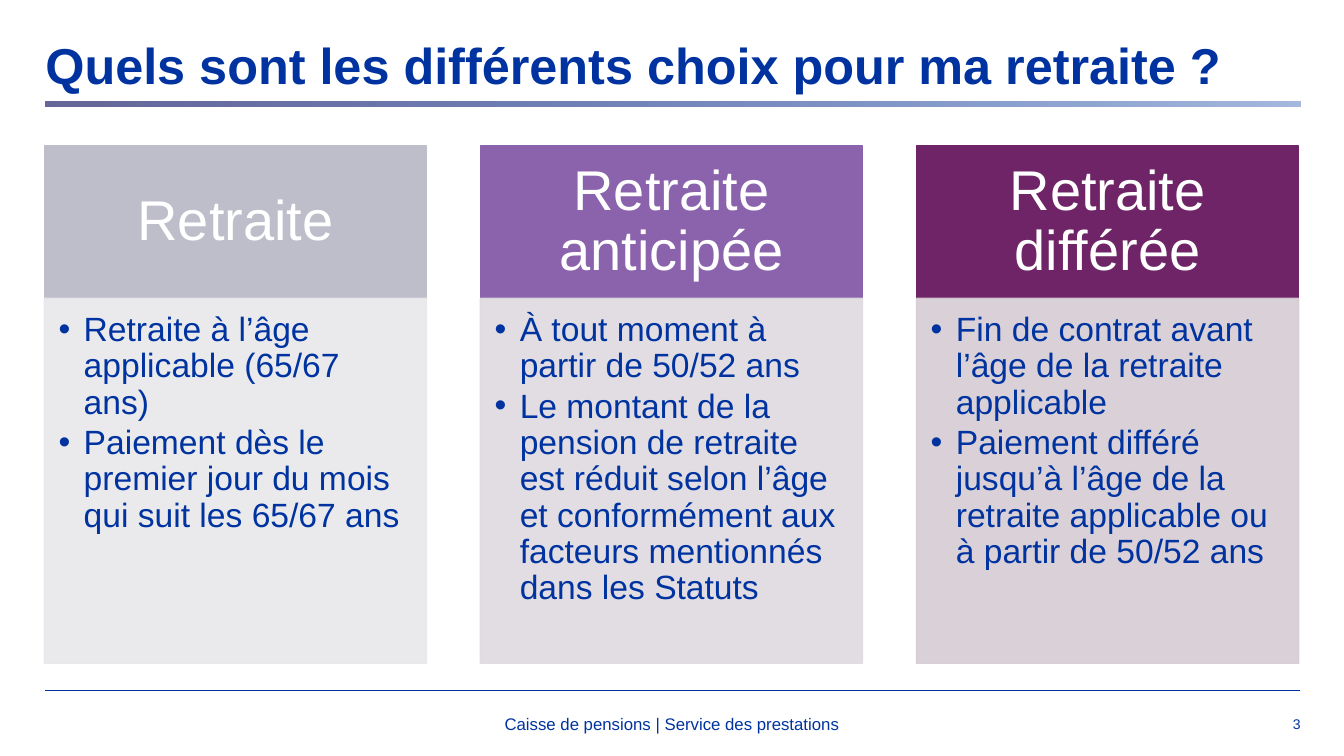
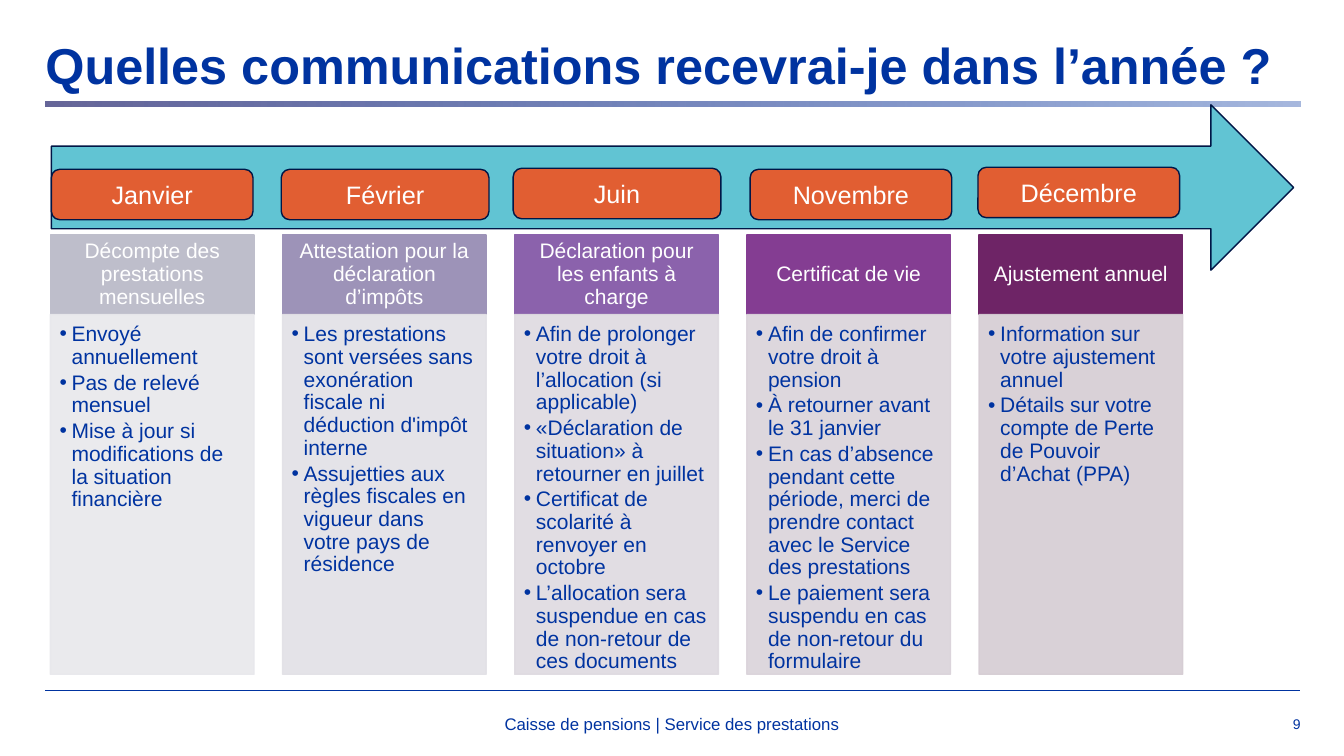
from typing import NamedTuple

from lxml import etree
from pptx import Presentation
from pptx.dml.color import RGBColor
from pptx.enum.shapes import MSO_CONNECTOR, MSO_SHAPE
from pptx.enum.text import MSO_ANCHOR, PP_ALIGN
from pptx.oxml.ns import qn
from pptx.util import Inches, Pt

FONT = "Arial"
COLOURS = {
    "blue": "0033A0",
    "rule": "666699",
    "white": "FFFFFF",
    "navy": "001646",
    "arrow": "61C4D3",
    "month": "E15E32",
    # header and body tints of the columns
    "grey": "BEBECB", "grey_light": "E8E8EC",
    "lilac": "9D93B8", "lilac_light": "E2E1E6",
    "violet": "8B62AC", "violet_light": "DEDAE0",
    "purple": "843D92", "purple_light": "DAD3DA",
    "plum": "6E2466", "plum_light": "D5CCD3",
}
FOOTER = "Caisse de pensions | Service des prestations"
BODY_OPACITY = 90


class Box(NamedTuple):
    left: float
    top: float
    width: float
    height: float


class Column(NamedTuple):
    tint: str
    heading: str
    points: list[str]


class ColumnStyle(NamedTuple):
    left: float
    right: float
    top: float
    width: float
    heading_height: float
    body_height: float
    heading_size: float
    body_size: float
    heading_insets: tuple[float, float, float, float]
    body_insets: tuple[float, float, float, float]
    indent: float
    space_after: float


class Month(NamedTuple):
    name: str
    left: float
    top: float
    width: float


CHOICE_STYLE = ColumnStyle(
    left=0.44, right=12.88, top=1.45, width=3.79, heading_height=1.51, body_height=3.62,
    heading_size=40, body_size=24, heading_insets=(0.31, 0.18, 0.31, 0.18),
    body_insets=(0.14, 0.14, 0.19, 0.21), indent=0.25, space_after=3)
CHOICES = [
    Column("grey", "Retraite", [
        "Retraite à l’âge applicable (65/67 ans)",
        "Paiement dès le premier jour du mois qui suit les 65/67 ans"]),
    Column("violet", "Retraite anticipée", [
        "À tout moment à partir de 50/52 ans",
        "Le montant de la pension de retraite est réduit selon l’âge et "
        "conformément aux facteurs mentionnés dans les Statuts"]),
    Column("plum", "Retraite différée", [
        "Fin de contrat avant l’âge de la retraite applicable",
        "Paiement différé jusqu’à l’âge de la retraite applicable ou à partir de 50/52 ans"]),
]

LETTER_STYLE = ColumnStyle(
    left=0.5, right=11.73, top=2.33, width=2.02, heading_height=0.79, body_height=3.57,
    heading_size=15, body_size=15, heading_insets=(0.12, 0.07, 0.12, 0.07),
    body_insets=(0.09, 0.09, 0.11, 0.13), indent=0.12, space_after=2.25)
LETTERS = [
    Column("grey", "Décompte des prestations mensuelles", [
        "Envoyé annuellement",
        "Pas de relevé mensuel",
        "Mise à jour si modifications de la situation financière"]),
    Column("lilac", "Attestation pour la déclaration d’impôts", [
        "Les prestations sont versées sans exonération fiscale ni déduction d'impôt interne",
        "Assujetties aux règles fiscales en vigueur dans votre pays de résidence"]),
    Column("violet", "Déclaration pour les enfants à charge", [
        "Afin de prolonger votre droit à l’allocation (si applicable)",
        "«Déclaration de situation» à retourner en juillet",
        "Certificat de scolarité à renvoyer en octobre",
        "L’allocation sera suspendue en cas de non-retour de ces documents"]),
    Column("purple", "Certificat de vie", [
        "Afin de confirmer votre droit à pension",
        "À retourner avant le 31 janvier",
        "En cas d’absence pendant cette période, merci de prendre contact "
        "avec le Service des prestations",
        "Le paiement sera suspendu en cas de non-retour du formulaire"]),
    Column("plum", "Ajustement annuel", [
        "Information sur votre ajustement annuel",
        "Détails sur votre compte de Perte de Pouvoir d’Achat (PPA)"]),
]
MONTHS = [
    Month("Janvier", 0.51, 1.68, 2),
    Month("Février", 2.79, 1.68, 2.06),
    Month("Juin", 5.09, 1.67, 2.06),
    Month("Novembre", 7.44, 1.68, 2),
    Month("Décembre", 9.7, 1.66, 2),
]


def rgb(name: str) -> RGBColor:
    return RGBColor.from_string(COLOURS[name])


def set_opacity(parent, percent: int) -> None:
    """Make every colour under an XML element partly transparent."""
    for colour in parent.iter(qn("a:srgbClr")):
        etree.SubElement(colour, qn("a:alpha"), val=str(percent * 1000))


def add_block(slide, preset, box: Box, fill: str, line: str):
    block = slide.shapes.add_shape(preset, *map(Inches, box))
    block.shadow.inherit = False
    block.fill.solid()
    block.fill.fore_color.rgb = rgb(fill)
    block.line.color.rgb = rgb(line)
    block.line.width = Pt(1)
    return block


def set_frame(frame, anchor, insets=(0, 0, 0, 0)) -> None:
    frame.word_wrap = True
    frame.vertical_anchor = anchor
    (frame.margin_left, frame.margin_top,
     frame.margin_right, frame.margin_bottom) = map(Inches, insets)


def style_paragraph(paragraph, size: float, colour: str, align=PP_ALIGN.LEFT,
                    bold: bool = False, spacing: float = 1.0) -> None:
    paragraph.alignment = align
    paragraph.line_spacing = spacing
    font = paragraph.font
    font.name, font.size, font.bold = FONT, Pt(size), bold
    font.color.rgb = rgb(colour)


def add_label(slide, box: Box, text: str, size: float, align=PP_ALIGN.LEFT,
              anchor=MSO_ANCHOR.MIDDLE, bold: bool = False, spacing: float = 1.0) -> None:
    frame = slide.shapes.add_textbox(*map(Inches, box)).text_frame
    set_frame(frame, anchor)
    frame.text = text
    style_paragraph(frame.paragraphs[0], size, "blue", align, bold, spacing)


def add_bullet(paragraph, indent: float) -> None:
    paragraph.level = 1
    properties = paragraph._p.get_or_add_pPr()
    properties.set("marL", str(Inches(indent)))
    properties.set("indent", str(-Inches(indent)))
    etree.SubElement(properties, qn("a:buFont"), typeface=FONT)
    etree.SubElement(properties, qn("a:buChar"), char="•")


def add_page(deck, title: str, number: int):
    """Add a slide with the shared title, gradient rule and footer."""
    slide = deck.slides.add_slide(deck.slide_layouts[6])
    footer_line = slide.shapes.add_connector(
        MSO_CONNECTOR.STRAIGHT, *map(Inches, (0.45, 6.85, 12.89, 6.85)))
    footer_line.line.color.rgb = rgb("blue")
    footer_line.line.width = Pt(0.75)
    etree.SubElement(footer_line._element.spPr, qn("a:effectLst"))

    add_label(slide, Box(0.45, 0.41, 12.44, 1.17), title, 36,
              anchor=MSO_ANCHOR.TOP, bold=True, spacing=0.9)
    add_label(slide, Box(12.15, 6.98, 0.75, 0.4), str(number), 10, PP_ALIGN.RIGHT)
    add_label(slide, Box(3.07, 6.98, 7.19, 0.4), FOOTER, 12, PP_ALIGN.CENTER)

    title_rule = add_block(slide, MSO_SHAPE.RECTANGLE, Box(0.45, 1.01, 12.45, 0.05),
                           "rule", "rule")
    title_rule.line.fill.background()
    title_rule.fill.gradient()
    title_rule.fill.gradient_angle = 0
    start, end = title_rule.fill.gradient_stops
    start.color.rgb, start.position = rgb("rule"), 0
    end.color.rgb, end.position = rgb("blue"), 1
    set_opacity(end._gs, 35)
    return slide


def add_heading(slide, preset, box: Box, fill: str, line: str, text: str, size: float,
                insets=(0.1, 0.05, 0.1, 0.05), spacing: float = 1.0) -> None:
    """Add a filled block with white centred text."""
    frame = add_block(slide, preset, box, fill, line).text_frame
    set_frame(frame, MSO_ANCHOR.MIDDLE, insets)
    frame.text = text
    style_paragraph(frame.paragraphs[0], size, "white", PP_ALIGN.CENTER, spacing=spacing)


def add_columns(slide, columns: list[Column], style: ColumnStyle) -> None:
    """Spread the columns evenly between the left and right edges."""
    pitch = (style.right - style.left - style.width) / (len(columns) - 1)
    for index, column in enumerate(columns):
        left = style.left + index * pitch
        heading_box = Box(left, style.top, style.width, style.heading_height)
        add_heading(slide, MSO_SHAPE.RECTANGLE, heading_box, column.tint, column.tint,
                    column.heading, style.heading_size, style.heading_insets, 0.9)

        light = f"{column.tint}_light"
        body_box = Box(left, style.top + style.heading_height, style.width, style.body_height)
        body = add_block(slide, MSO_SHAPE.RECTANGLE, body_box, light, light)
        set_opacity(body._element.spPr, BODY_OPACITY)
        frame = body.text_frame
        set_frame(frame, MSO_ANCHOR.TOP, style.body_insets)
        frame.text = "\n".join(column.points)
        for paragraph in frame.paragraphs:
            add_bullet(paragraph, style.indent)
            paragraph.space_after = Pt(style.space_after)
            style_paragraph(paragraph, style.body_size, "blue", spacing=0.9)


def main() -> None:
    deck = Presentation()
    deck.slide_width, deck.slide_height = Inches(13.33), Inches(7.5)

    # Retirement choices
    choices = add_page(deck, "Quels sont les différents choix pour ma retraite ?", 3)
    add_columns(choices, CHOICES, CHOICE_STYLE)

    # Yearly letters under a timeline arrow
    letters = add_page(deck, "Quelles communications recevrai-je dans l’année ?", 9)
    add_columns(letters, LETTERS, LETTER_STYLE)
    add_block(letters, MSO_SHAPE.RIGHT_ARROW, Box(0.51, 1.04, 12.32, 1.64), "arrow", "navy")
    for month in MONTHS:
        add_heading(letters, MSO_SHAPE.ROUNDED_RECTANGLE,
                    Box(month.left, month.top, month.width, 0.5),
                    "month", "navy", month.name, 18)

    deck.save("out.pptx")


if __name__ == "__main__":
    main()
